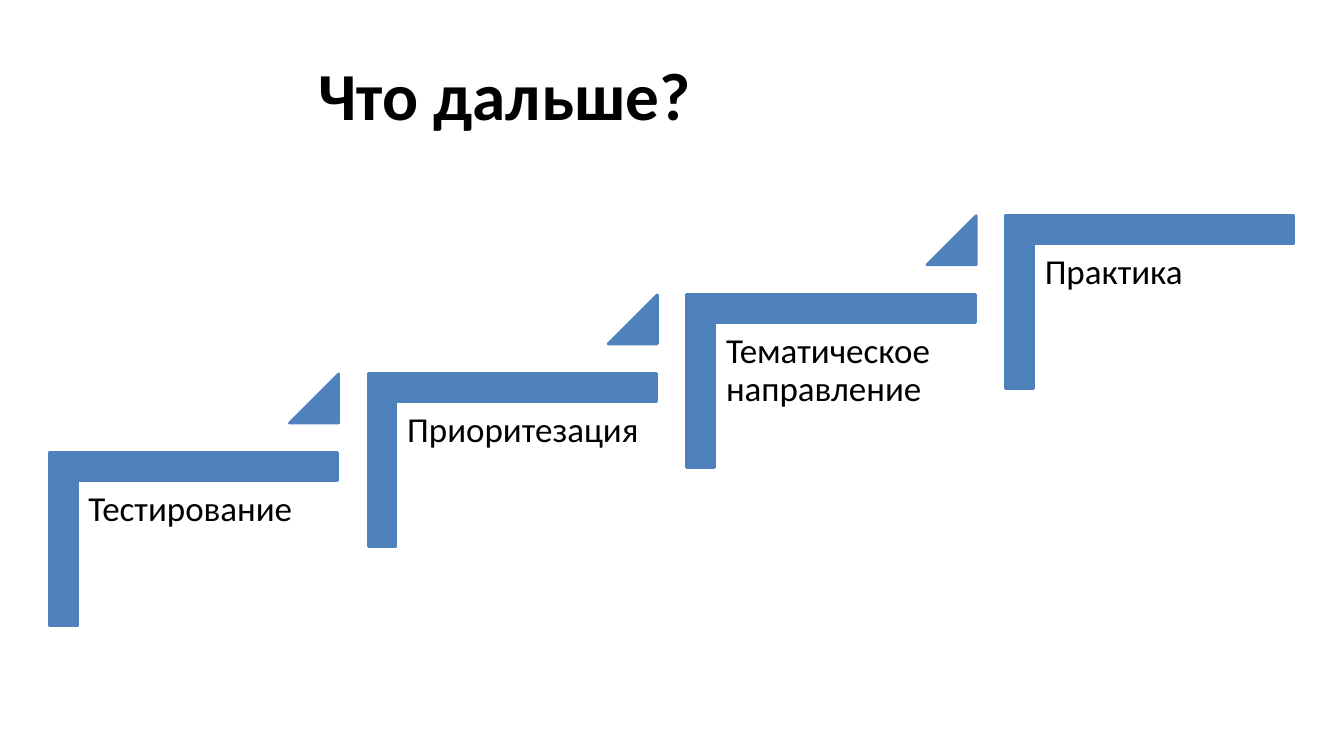
from pptx import Presentation
from pptx.dml.color import RGBColor
from pptx.enum.shapes import MSO_SHAPE
from pptx.enum.text import MSO_ANCHOR, MSO_AUTO_SIZE, PP_ALIGN
from pptx.util import Pt

STEPS = ["Тестирование", "Приоритезация", "Тематическое направление", "Практика"]
BLUE = "4F81BD"
BLACK = "000000"
STEP_RIGHT = 227.7
STEP_UP = 56.5


def color(hex_text):
    """Turn a hex string into a colour."""
    return RGBColor.from_string(hex_text)


def format_text(paragraph, size, bold=False):
    """Apply the slide's font to a paragraph's runs."""
    for run in paragraph.runs:
        run.font.name = "Calibri"
        run.font.size = Pt(size)
        run.font.bold = bold
        run.font.color.rgb = color(BLACK)


def add_title(slide, text):
    """Fill and place the title placeholder."""
    title = slide.shapes.title
    title.left, title.top, title.width, title.height = Pt(48), Pt(21.6), Pt(625), Pt(90)
    text_frame = title.text_frame
    text_frame.text = text
    text_frame.auto_size = MSO_AUTO_SIZE.NONE
    text_frame.vertical_anchor = MSO_ANCHOR.MIDDLE
    paragraph = text_frame.paragraphs[0]
    paragraph.alignment = PP_ALIGN.CENTER
    format_text(paragraph, 48, bold=True)


def add_blue_shape(shapes, kind, left, top, width, height, adjustments):
    """Add a solid blue preset shape."""
    shape = shapes.add_shape(kind, Pt(left), Pt(top), Pt(width), Pt(height))
    shape.shadow.inherit = False
    for index, value in enumerate(adjustments):
        shape.adjustments[index] = value
    shape.fill.solid()
    shape.fill.fore_color.rgb = color(BLUE)
    shape.line.color.rgb = color(BLUE)
    shape.line.width = Pt(2)
    return shape


def add_label(shapes, text, left, top):
    """Add the text under a stair."""
    label = shapes.add_textbox(Pt(left), Pt(top), Pt(185.8), Pt(162.7))
    text_frame = label.text_frame
    text_frame.text = text
    text_frame.word_wrap = True
    text_frame.margin_left = text_frame.margin_right = Pt(7.2)
    text_frame.margin_top = text_frame.margin_bottom = Pt(7.2)
    paragraph = text_frame.paragraphs[0]
    paragraph.line_spacing = 0.9
    format_text(paragraph, 25)


def add_staircase(slide, steps):
    """Add the rising stairs with a triangle between neighbours."""
    shapes = slide.shapes.add_group_shape().shapes
    for index, text in enumerate(steps):
        right, up = index * STEP_RIGHT, index * STEP_UP
        corner = add_blue_shape(shapes, MSO_SHAPE.CORNER, 76.3 + right, 282.3 - up,
                                123.8, 205.9, [0.161, 0.161])
        corner.rotation = 90
        add_label(shapes, text, 56.1 + right, 343.8 - up)
        if index < len(steps) - 1:
            add_blue_shape(shapes, MSO_SHAPE.ISOSCELES_TRIANGLE, 206.8 + right, 267.1 - up,
                           35.1, 35.1, [1])


def main():
    """Build and save the slide."""
    presentation = Presentation()
    presentation.slide_width, presentation.slide_height = Pt(960), Pt(540)
    slide = presentation.slides.add_slide(presentation.slide_layouts[5])
    add_title(slide, "Что дальше?")
    add_staircase(slide, STEPS)
    presentation.save("out.pptx")


if __name__ == "__main__":
    main()
